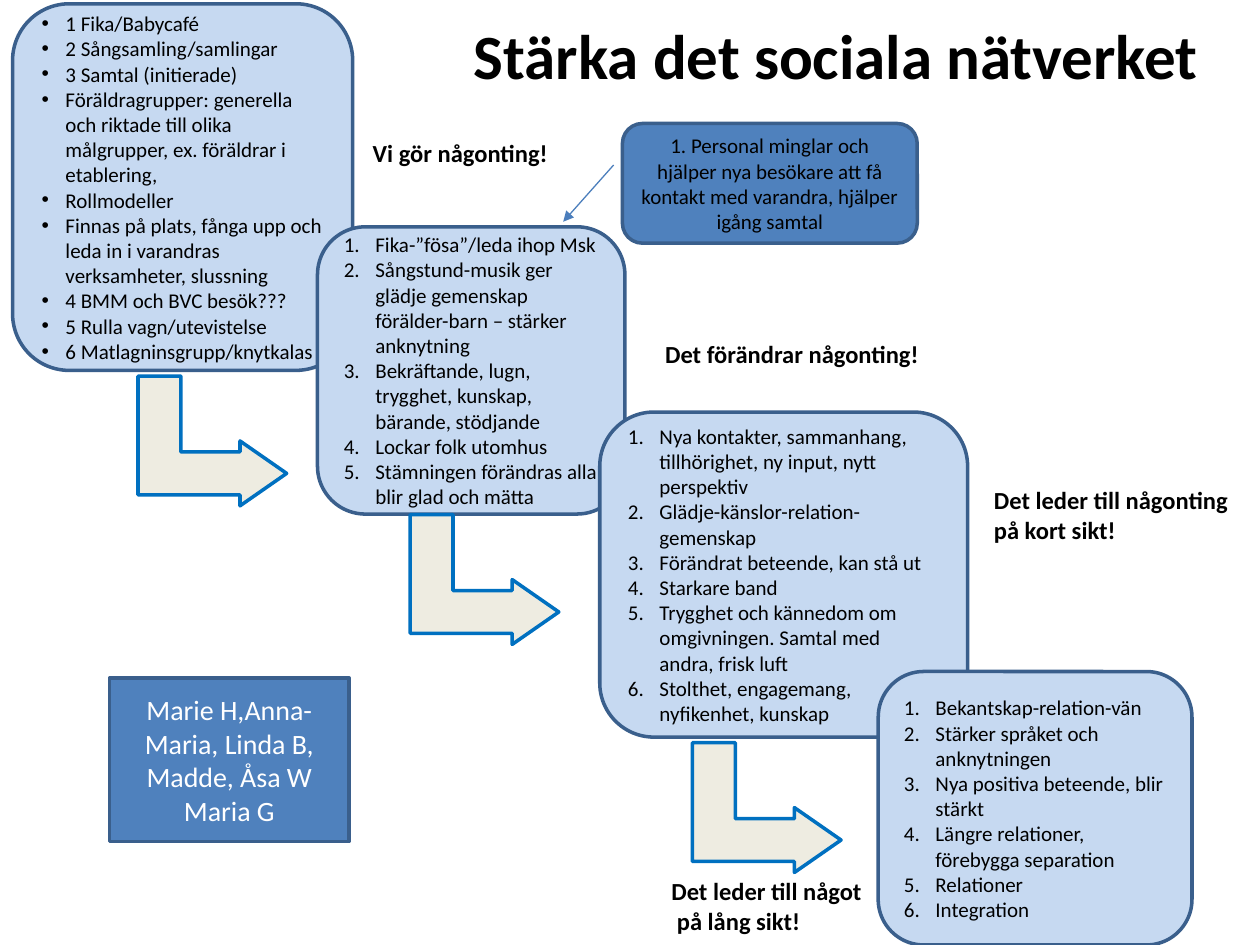
from lxml import etree
from pptx import Presentation
from pptx.dml.color import RGBColor
from pptx.enum import shapes, text
from pptx.oxml.ns import qn
from pptx.util import Emu, Pt

PX = 9144  # 100 px to the inch
COLORS = {
    "black": "000000", "white": "FFFFFF", "pale": "C6D9F1", "blue": "4F81BD",
    "edge": "3A5F8C", "cream": "EEECE1", "arrow": "0070C0", "pointer": "4B7EBC",
}
KIND = shapes.MSO_SHAPE
ALIGN = text.PP_ALIGN


def write(shape, lines, size=12, color="black", bold=False, align=ALIGN.LEFT,
          bullet=None, indent=0, spacing=None, after=0):
    """Fill a shape with paragraphs; bullet is "•" or "1." for numbering."""
    frame = shape.text_frame
    frame.word_wrap = True
    frame.vertical_anchor = text.MSO_ANCHOR.MIDDLE
    for i, line in enumerate(lines):
        p = frame.paragraphs[0] if i == 0 else frame.add_paragraph()
        p.alignment, p.line_spacing, p.space_after = align, spacing, Pt(after)
        run = p.add_run()
        run.text = line
        run.font.name, run.font.size, run.font.bold = "Calibri", Pt(size), bold
        run.font.color.rgb = RGBColor.from_string(COLORS[color])
        if bullet:
            props = p._p.get_or_add_pPr()
            props.set("marL", str(indent * PX))
            props.set("indent", str(-indent * PX))
            if bullet == "•":
                etree.SubElement(props, qn("a:buFont")).set("typeface", "Arial")
                etree.SubElement(props, qn("a:buChar")).set("char", bullet)
            else:
                etree.SubElement(props, qn("a:buAutoNum")).set("type", "arabicPeriod")


def add_box(kind, place, fill, edge="edge"):
    shape = slide.shapes.add_shape(kind, *[Emu(n * PX) for n in place])
    shape.shadow.inherit = False
    shape.fill.solid()
    shape.fill.fore_color.rgb = RGBColor.from_string(COLORS[fill])
    shape.line.color.rgb = RGBColor.from_string(COLORS[edge])
    shape.line.width = Pt(2)
    return shape


prs = Presentation()
prs.slide_width, prs.slide_height = Emu(1000 * PX), Emu(750 * PX)
slide = prs.slides.add_slide(prs.slide_layouts[5])

title = slide.shapes.title
title.left, title.top, title.width, title.height = [
    Emu(n * PX) for n in (354, -19, 619, 125)]
write(title, ["Stärka det sociala nätverket"], size=36, bold=True, align=ALIGN.CENTER)

# The chain of steps, from activities to long-term effects
steps = [
    ((10, 3, 270, 291), "•", 19, [
        "1 Fika/Babycafé",
        "2 Sångsamling/samlingar",
        "3 Samtal (initierade)",
        "Föräldragrupper: generella och riktade till olika målgrupper, "
        "ex. föräldrar i etablering,",
        "Rollmodeller",
        "Finnas på plats, fånga upp och leda in i varandras verksamheter, slussning",
        "4 BMM och BVC besök???",
        "5 Rulla vagn/utevistelse",
        "6 Matlagninsgrupp/knytkalas",
    ]),
    ((252, 180, 244, 228), "1.", 25, [
        "Fika-”fösa”/leda ihop Msk",
        "Sångstund-musik ger glädje gemenskap förälder-barn – stärker anknytning",
        "Bekräftande, lugn, trygghet, kunskap, bärande, stödjande",
        "Lockar folk utomhus",
        "Stämningen förändras alla blir glad och mätta",
    ]),
    ((476, 327, 292, 258), "1.", 25, [
        "Nya kontakter, sammanhang, tillhörighet, ny input, nytt perspektiv",
        "Glädje-känslor-relation-gemenskap",
        "Förändrat beteende, kan stå ut",
        "Starkare band",
        "Trygghet och kännedom om omgivningen. Samtal med andra, frisk luft",
        "Stolthet, engagemang, nyfikenhet, kunskap",
    ]),
    ((697, 533, 249, 217), "1.", 25, [
        "Bekantskap-relation-vän",
        "Stärker språket och anknytningen",
        "Nya positiva beteende, blir stärkt",
        "Längre relationer, förebygga separation",
        "Relationer",
        "Integration",
    ]),
]
for place, bullet, indent, lines in steps:
    write(add_box(KIND.ROUNDED_RECTANGLE, place, "pale"), lines,
          bullet=bullet, indent=indent)

for left, top in [(117, 291), (333, 401), (557, 582)]:
    bend = add_box(KIND.BENT_UP_ARROW, (left, top, 103, 118), "cream", "arrow")
    bend.rotation = 90
    for i, value in enumerate((0.33, 0.25, 0.36)):
        bend.adjustments[i] = value

captions = [
    ((286, 106, 169, 33), ["Vi gör någonting!"]),
    ((518, 233, 261, 98), ["Det förändrar någonting!"]),
    ((779, 361, 306, 98), ["Det leder till någonting", "på kort sikt!"]),
    ((523, 671, 290, 98), ["Det leder till något", " på lång sikt!"]),
]
for place, lines in captions:
    caption = slide.shapes.add_textbox(*[Emu(n * PX) for n in place])
    frame = caption.text_frame
    frame.margin_left = frame.margin_right = Emu(10 * PX)
    frame.margin_top = frame.margin_bottom = Emu(10 * PX)
    write(caption, lines, size=14, bold=True, spacing=0.9, after=2)

participants = add_box(KIND.RECTANGLE, (87, 538, 190, 130), "blue")
write(participants, ["Marie H,Anna-Maria, Linda B, Madde, Åsa W Maria G"],
      size=16, color="white", align=ALIGN.CENTER)

staff_note = add_box(KIND.ROUNDED_RECTANGLE, (494, 98, 234, 95), "blue")
write(staff_note, ["1. Personal minglar och hjälper nya besökare att få kontakt "
                   "med varandra, hjälper igång samtal"], align=ALIGN.CENTER)

pointer = slide.shapes.add_connector(
    shapes.MSO_CONNECTOR.STRAIGHT, *[Emu(n * PX) for n in (487, 131, 447, 176)])
pointer.line.color.rgb = RGBColor.from_string(COLORS["pointer"])
pointer.line.width = Pt(0.75)
etree.SubElement(pointer.line._get_or_add_ln(), qn("a:tailEnd")).set("type", "triangle")
etree.SubElement(pointer._element.spPr, qn("a:effectLst"))

prs.save("out.pptx")
